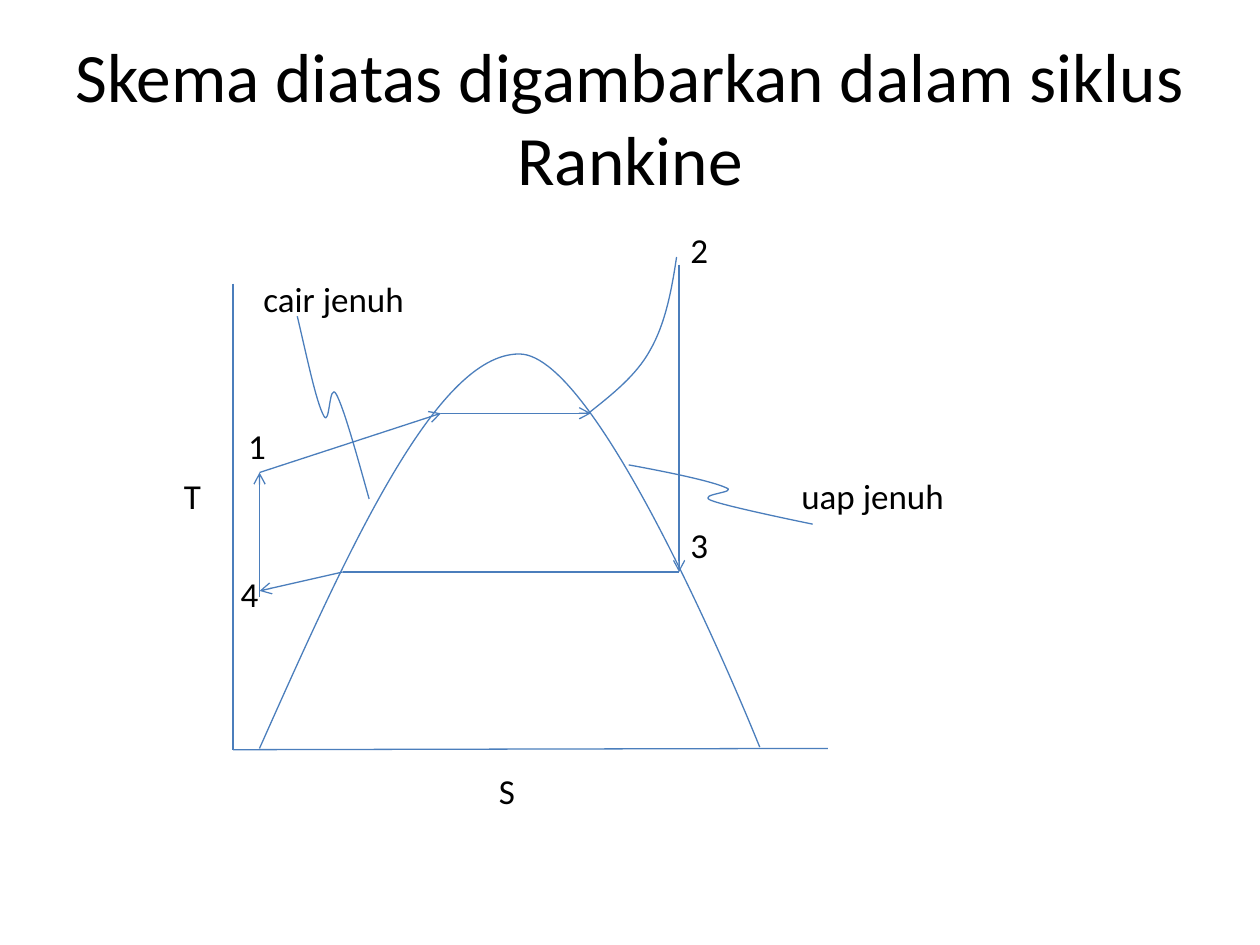
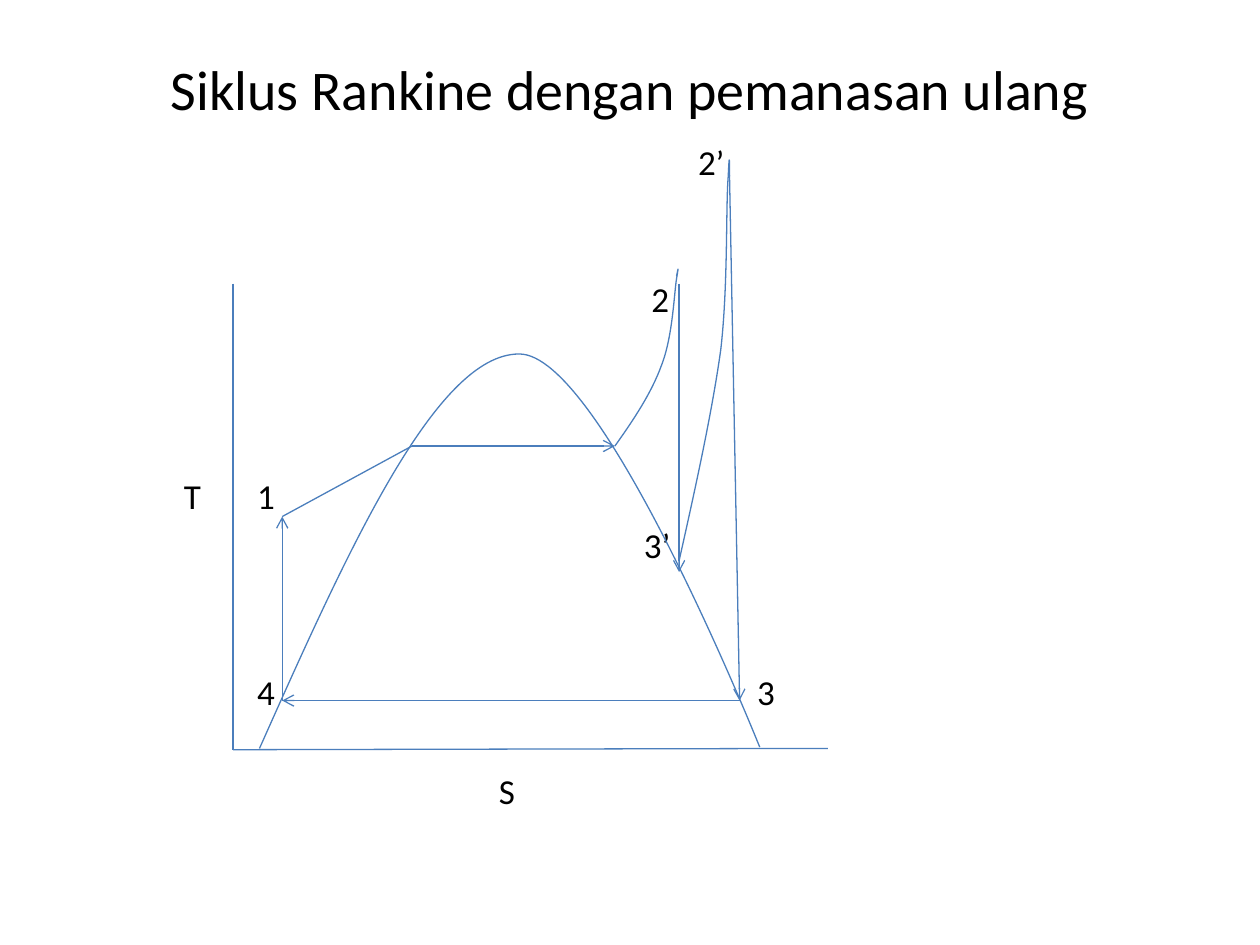
from dataclasses import dataclass

from lxml import etree
from pptx import Presentation
from pptx.dml.color import RGBColor
from pptx.enum.shapes import MSO_CONNECTOR
from pptx.enum.text import MSO_ANCHOR, MSO_AUTO_SIZE, PP_ALIGN
from pptx.oxml.ns import qn
from pptx.util import Inches, Pt

STRAIGHT = MSO_CONNECTOR.STRAIGHT
MIDDLE = MSO_ANCHOR.MIDDLE
NO_FIT = MSO_AUTO_SIZE.NONE
LEFT, CENTER = PP_ALIGN.LEFT, PP_ALIGN.CENTER
TITLE_ONLY = 5


@dataclass(frozen=True)
class Theme:
    font: str = "Calibri"
    text: RGBColor = RGBColor(0x00, 0x00, 0x00)
    line: RGBColor = RGBColor(0x4B, 0x7E, 0xBC)
    line_width: float = 0.75
    label_size: float = 20


THEME = Theme()

# Labels sit on evenly spaced rows, counted from the row of point 2
FIRST_ROW, ROW_STEP, LABEL_HEIGHT = 1.98, 0.39, 0.36

# Geometry shared by both T-S diagrams
ORIGIN = (1.85, 5.95)
T_AXIS_TOP = (1.85, 2.25)
S_AXIS_END = (6.57, 5.94)
SATURATION_DOME = [(2.06, 5.94), (2.76, 4.37), (3.46, 2.81), (4.12, 2.81),
                   (4.78, 2.8), (6.03, 5.93), (6.03, 5.93)]
AXIS_LABELS = [("T", 1.46, 5), ("S", 3.96, 11)]


def write_text(frame, text, size=THEME.label_size, align=LEFT, wrap=True):
    frame.auto_size = NO_FIT
    frame.word_wrap = wrap
    frame.vertical_anchor = MIDDLE
    para = frame.paragraphs[0]
    para.alignment = align
    span = para.add_run()
    span.text = text
    span.font.name = THEME.font
    span.font.size = Pt(size)
    span.font.color.rgb = THEME.text


def add_title(page, text, size, height):
    title = page.shapes.title
    title.left, title.top = Inches(0.5), Inches(0.3)
    title.width, title.height = Inches(9), Inches(height)
    write_text(title.text_frame, text, size=size, align=CENTER)


def add_label(page, text, left, row):
    top = FIRST_ROW + row * ROW_STEP - LABEL_HEIGHT / 2
    width = 0.2 + 0.13 * len(text)
    box = page.shapes.add_textbox(Inches(left), Inches(top),
                                  Inches(width), Inches(LABEL_HEIGHT))
    frame = box.text_frame
    frame.margin_left = frame.margin_right = 0
    frame.margin_top = frame.margin_bottom = 0
    write_text(frame, text, wrap=False)


def style_line(shape):
    shape.line.color.rgb = THEME.line
    shape.line.width = Pt(THEME.line_width)


def add_line(page, start, end, arrow=False):
    ends = [Inches(value) for value in (*start, *end)]
    connector = page.shapes.add_connector(STRAIGHT, *ends)
    style_line(connector)
    outline = connector.line._get_or_add_ln()
    if arrow:
        etree.SubElement(outline, qn("a:tailEnd"), type="arrow")
    etree.SubElement(outline.getparent(), qn("a:effectLst"))


def add_curve(page, points):
    """Draw Bezier segments: a start point, then three points per segment."""
    places = [(Inches(x), Inches(y)) for x, y in points]
    builder = page.shapes.build_freeform(*places[0])
    builder.add_line_segments(places[1:], close=False)
    curve = builder.convert_to_shape()
    curve.fill.background()
    curve.shadow.inherit = False
    style_line(curve)
    # Merge each three straight segments into one cubic segment
    steps = list(curve.element.iter(qn("a:lnTo")))
    for index in range(0, len(steps), 3):
        first, *others = steps[index:index + 3]
        cubic = etree.Element(qn("a:cubicBezTo"))
        first.addprevious(cubic)
        for step in (first, *others):
            cubic.append(step[0])
            step.getparent().remove(step)


def add_diagram(deck, title, title_size, title_height, labels, lines, arrows, curves):
    page = deck.slides.add_slide(deck.slide_layouts[TITLE_ONLY])
    add_title(page, title, title_size, title_height)
    for label in AXIS_LABELS + labels:
        add_label(page, *label)
    axes = [(T_AXIS_TOP, ORIGIN), (ORIGIN, S_AXIS_END)]
    for start, end in axes + lines:
        add_line(page, start, end)
    for start, end in arrows:
        add_line(page, start, end, arrow=True)
    for points in [SATURATION_DOME] + curves:
        add_curve(page, points)


def add_simple_cycle(deck):
    pump_out, boil_start, boil_end = (2.06, 3.75), (3.5, 3.28), (4.69, 3.28)
    turbine_out, condensed = (5.39, 4.54), (2.72, 4.54)
    superheating = [(4.67, 3.28), (4.86, 3.13), (5.05, 2.98), (5.16, 2.78),
                    (5.28, 2.57), (5.33, 2.31), (5.37, 2.04)]
    liquid_leader = [(2.36, 2.51), (2.44, 2.85), (2.51, 3.19), (2.57, 3.3),
                     (2.62, 3.4), (2.61, 3.02), (2.67, 3.13),
                     (2.73, 3.24), (2.83, 3.6), (2.93, 3.96)]
    vapour_leader = [(4.99, 3.69), (5.32, 3.75), (5.65, 3.82), (5.76, 3.87),
                     (5.87, 3.91), (5.53, 3.92), (5.64, 3.97),
                     (5.76, 4.02), (6.45, 4.16), (6.45, 4.16)]
    add_diagram(
        deck, "Skema diatas digambarkan dalam siklus Rankine", 39.6, 1.25,
        labels=[("2", 5.48, 0), ("cair jenuh", 2.09, 1), ("1", 1.97, 4),
                ("uap jenuh", 6.36, 5), ("3", 5.48, 6), ("4", 1.91, 7)],
        lines=[(condensed, turbine_out)],
        arrows=[(condensed, (2.06, 4.69)), (pump_out, boil_start),
                ((2.06, 4.74), pump_out), (boil_start, boil_end),
                ((5.39, 2.1), turbine_out)],
        curves=[superheating, liquid_leader, vapour_leader])


def add_reheat_cycle(deck):
    pump_in, pump_out = (2.24, 5.56), (2.24, 4.1)
    boil_start, boil_end = (3.27, 3.54), (4.88, 3.54)
    turbine_out = (5.87, 5.56)
    reheating = [(5.39, 4.45), (5.52, 3.87), (5.65, 3.28), (5.72, 2.78),
                 (5.78, 2.27), (5.76, 1.63), (5.78, 1.4),
                 (5.79, 1.17), (5.79, 1.29), (5.79, 1.4)]
    superheating = [boil_end, (5.03, 3.33), (5.17, 3.12), (5.25, 2.9),
                    (5.34, 2.67), (5.35, 2.33), (5.37, 2.21),
                    (5.39, 2.09), (5.38, 2.14), (5.37, 2.19)]
    add_diagram(
        deck, "Siklus Rankine dengan pemanasan ulang", 32, 0.8,
        labels=[("2’", 5.54, -1.8), ("2", 5.17, 1), ("1", 2.04, 5),
                ("3’", 5.11, 6), ("4", 2.04, 9), ("3", 6.01, 9)],
        lines=[(pump_out, boil_start)],
        arrows=[((5.39, 2.25), (5.39, 4.54)), ((5.79, 1.39), turbine_out),
                (boil_start, boil_end), (turbine_out, pump_in),
                (pump_in, pump_out)],
        curves=[reheating, superheating])


def main():
    deck = Presentation()
    deck.slide_width, deck.slide_height = Inches(10), Inches(7.5)
    add_simple_cycle(deck)
    add_reheat_cycle(deck)
    deck.save("out.pptx")


if __name__ == "__main__":
    main()
